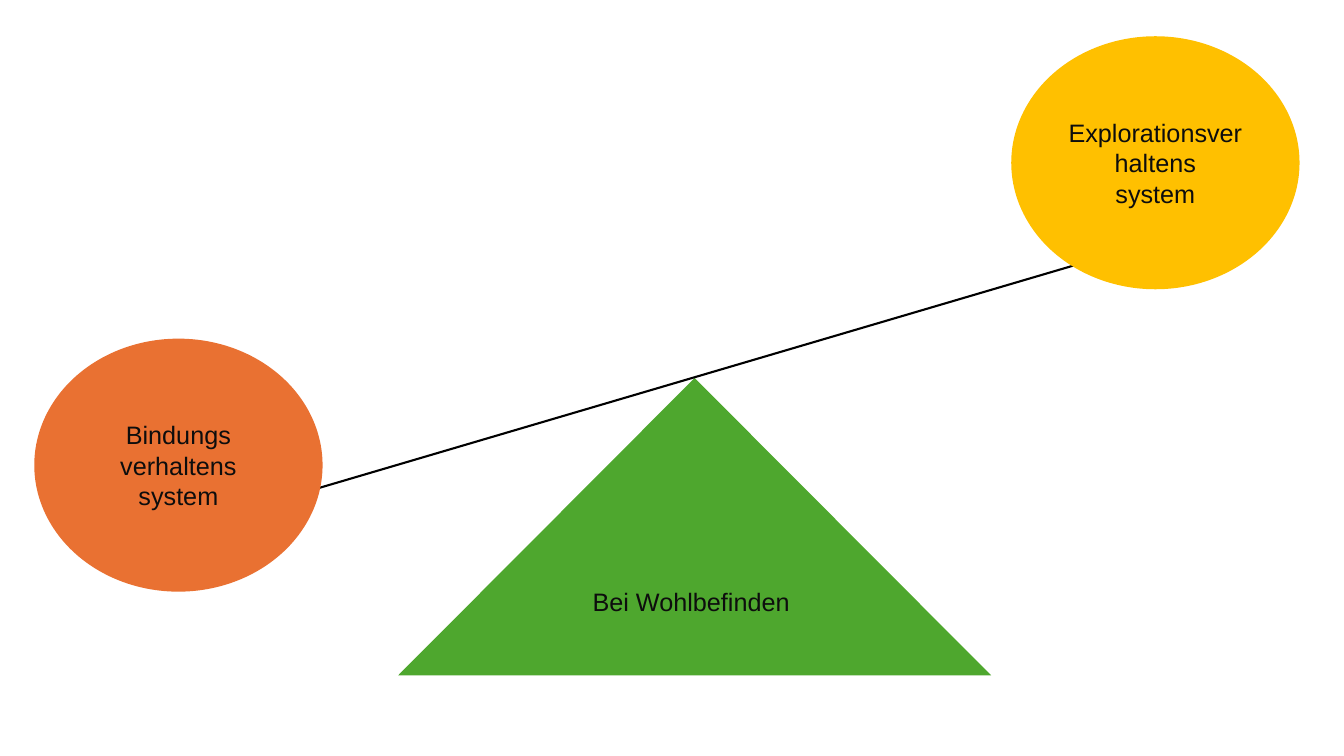
import dataclasses

import pptx
import pptx.dml.color
import pptx.enum.shapes
import pptx.enum.text
import pptx.oxml.ns
import pptx.shapes.autoshape
import pptx.slide
import pptx.util
from lxml import etree

SHAPES = pptx.enum.shapes.MSO_SHAPE
SLIDE_WIDTH = pptx.util.Inches(13.33)
SLIDE_HEIGHT = pptx.util.Inches(7.5)


@dataclasses.dataclass(frozen=True)
class Theme:
    font: str = "Arial"
    label_size: float = 18
    beam_width: float = 1.5
    text: str = "0D0D0D"
    beam: str = "000000"
    wellbeing: str = "4EA72E"
    exploration: str = "FFC000"
    attachment: str = "E97132"


@dataclasses.dataclass(frozen=True)
class Part:
    """A labelled part of the seesaw, placed in percent of the slide's size."""
    kind: pptx.enum.shapes.MSO_SHAPE
    left: float
    top: float
    width: float
    height: float
    fill: str
    label: str


THEME = Theme()
WEIGHT_SIZE = (21.45, 33.47)
BEAM_START = (9, 72.27)
BEAM_END = (96.02, 26.67)

FULCRUM = Part(SHAPES.ISOSCELES_TRIANGLE, 29.63, 50, 44.11, 39.33,
               THEME.wellbeing, "Bei Wohlbefinden ")
WEIGHTS = [
    Part(SHAPES.FLOWCHART_CONNECTOR, 75.24, 4.8, *WEIGHT_SIZE,
         THEME.exploration, "Explorationsverhaltens\nsystem"),
    Part(SHAPES.FLOWCHART_CONNECTOR, 2.55, 44.8, *WEIGHT_SIZE,
         THEME.attachment, "Bindungs\nverhaltens\nsystem"),
]


def across(percent: float) -> int:
    return round(SLIDE_WIDTH * percent / 100)


def down(percent: float) -> int:
    return round(SLIDE_HEIGHT * percent / 100)


def color(value: str) -> pptx.dml.color.RGBColor:
    return pptx.dml.color.RGBColor.from_string(value)


def write_label(shape: pptx.shapes.autoshape.Shape, label: str) -> None:
    text_frame = shape.text_frame
    text_frame.text = label
    text_frame.word_wrap = True
    text_frame.vertical_anchor = pptx.enum.text.MSO_ANCHOR.MIDDLE
    for paragraph in text_frame.paragraphs:
        paragraph.alignment = pptx.enum.text.PP_ALIGN.CENTER
        for run in paragraph.runs:
            run.font.name = THEME.font
            run.font.size = pptx.util.Pt(THEME.label_size)
            run.font.color.rgb = color(THEME.text)


def draw_part(slide: pptx.slide.Slide, part: Part) -> None:
    shape = slide.shapes.add_shape(
        part.kind, across(part.left), down(part.top),
        across(part.width), down(part.height))
    shape.shadow.inherit = False
    shape.fill.solid()
    shape.fill.fore_color.rgb = color(part.fill)
    shape.line.fill.background()
    write_label(shape, part.label)


def draw_beam(slide: pptx.slide.Slide) -> None:
    beam = slide.shapes.add_connector(
        pptx.enum.shapes.MSO_CONNECTOR.STRAIGHT,
        across(BEAM_START[0]), down(BEAM_START[1]),
        across(BEAM_END[0]), down(BEAM_END[1]))
    beam.line.color.rgb = color(THEME.beam)
    beam.line.width = pptx.util.Pt(THEME.beam_width)
    etree.SubElement(beam._element.spPr, pptx.oxml.ns.qn("a:effectLst"))


def main() -> None:
    presentation = pptx.Presentation()
    presentation.slide_width = SLIDE_WIDTH
    presentation.slide_height = SLIDE_HEIGHT
    slide = presentation.slides.add_slide(presentation.slide_layouts[6])
    draw_part(slide, FULCRUM)
    draw_beam(slide)
    for weight in WEIGHTS:
        draw_part(slide, weight)
    presentation.save("out.pptx")


if __name__ == "__main__":
    main()
